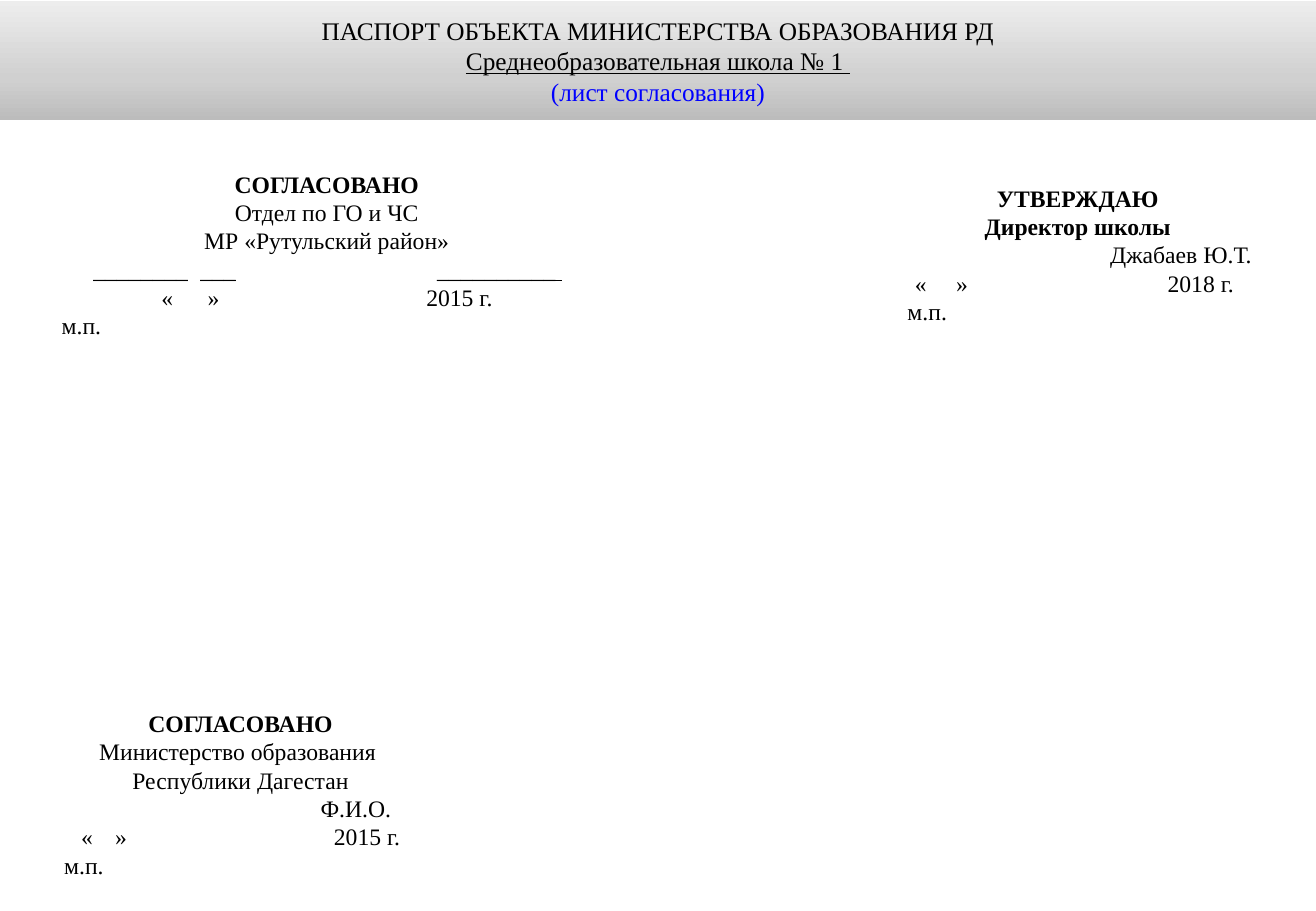
from dataclasses import dataclass

import lxml.etree
import pptx
import pptx.dml.color
import pptx.enum.shapes
import pptx.enum.text
import pptx.oxml.ns
import pptx.util

Inches = pptx.util.Inches
qn = pptx.oxml.ns.qn
CENTER = pptx.enum.text.PP_ALIGN.CENTER
LEFT = pptx.enum.text.PP_ALIGN.LEFT


@dataclass(frozen=True)
class Theme:
    font: str = "Times New Roman"
    title_size: float = 15
    body_size: float = 14
    ink: str = "000000"
    accent: str = "0000FF"
    frame: str = "FFFFFF"
    frame_width: float = 2
    banner_stops: tuple[tuple[int, str], ...] = ((0, "BCBCBC"), (35, "D0D0D0"), (100, "EDEDED"))


THEME = Theme()


@dataclass(frozen=True)
class Piece:
    text: str
    bold: bool = False
    underline: bool = False
    color: str = THEME.ink


@dataclass(frozen=True)
class Line:
    pieces: tuple[Piece, ...]
    tab_stops: tuple[float, ...] = ()


@dataclass(frozen=True)
class Block:
    left: float
    top: float
    width: float
    height: float
    lines: tuple[Line, ...]


def text_line(text: str, *, bold: bool = False, underline: bool = False,
              color: str = THEME.ink, tab_stops: tuple[float, ...] = ()) -> Line:
    return Line((Piece(text, bold, underline, color),), tab_stops)


def date_line(year: str, *tab_stops: float) -> Line:
    return text_line(f"\t«\t»\t{year} г.", tab_stops=tab_stops)


def stamp_line(indent: float) -> Line:
    return text_line("\tм.п.", tab_stops=(indent,))


def signature_line(name: str, *tab_stops: float) -> Line:
    return Line((Piece("\t"), Piece("\t", underline=True), Piece(name)), tab_stops)


BANNER = Block(0, 0.01, 10.83, 0.98, (
    text_line("ПАСПОРТ ОБЪЕКТА МИНИСТЕРСТВА ОБРАЗОВАНИЯ РД"),
    text_line("Среднеобразовательная школа № 1 ", underline=True),
    text_line("(лист согласования)", color=THEME.accent),
))

APPROVALS = (
    Block(0.36, 1.39, 4.66, 1.41, (
        text_line("СОГЛАСОВАНО", bold=True),
        text_line("Отдел по ГО и ЧС"),
        text_line("МР «Рутульский район»"),
        Line((Piece("\t"), Piece("________\t___", underline=True), Piece("\t"),
              Piece("\t__________ ", underline=True)), (0.31, 1.19, 1.72, 3.14)),
        date_line("2015", 0.87, 1.25, 3.05),
        stamp_line(0.05),
    )),
    Block(7.27, 1.39, 3.2, 1.41, (
        text_line("УТВЕРЖДАЮ", bold=True),
        text_line("Директор школы", bold=True),
        signature_line(" Джабаев Ю.Т.", 0.06, 1.72),
        date_line("2018", 0.16, 0.5, 2.24),
        stamp_line(0.1),
    )),
    Block(0.38, 5.83, 3.2, 1.41, (
        text_line("СОГЛАСОВАНО", bold=True),
        text_line("Министерство образования "),
        text_line("Республики Дагестан"),
        signature_line("Ф.И.О.", 0.26, 2.16),
        date_line("2015", 0.19, 0.47, 2.27),
        stamp_line(0.05),
    )),
)


def rgb(color: str) -> pptx.dml.color.RGBColor:
    return pptx.dml.color.RGBColor.from_string(color)


def add_text(paragraph, text: str, *, size: float, bold: bool, underline: bool, color: str) -> None:
    run = paragraph.add_run()
    run.text = text
    run.font.name = THEME.font
    run.font.size = pptx.util.Pt(size)
    run.font.bold = bold
    run.font.underline = underline
    run.font.color.rgb = rgb(color)


def set_tab_stops(paragraph, positions: tuple[float, ...]) -> None:
    properties = paragraph._p.get_or_add_pPr()
    tab_list = lxml.etree.SubElement(properties, qn("a:tabLst"))
    for position in positions:
        lxml.etree.SubElement(tab_list, qn("a:tab"), pos=str(Inches(position)), algn="l")


def add_block(slide, block: Block, size: float):
    shape = slide.shapes.add_shape(
        pptx.enum.shapes.MSO_SHAPE.RECTANGLE, Inches(block.left), Inches(block.top),
        Inches(block.width), Inches(block.height))
    shape.shadow.inherit = False
    frame = shape.text_frame
    frame.word_wrap = True
    frame.vertical_anchor = pptx.enum.text.MSO_ANCHOR.MIDDLE
    for index, line in enumerate(block.lines):
        paragraph = frame.add_paragraph() if index else frame.paragraphs[0]
        paragraph.alignment = LEFT if line.tab_stops else CENTER
        if line.tab_stops:
            set_tab_stops(paragraph, line.tab_stops)
        for piece in line.pieces:
            add_text(paragraph, piece.text, size=size, bold=piece.bold,
                     underline=piece.underline, color=piece.color)
    return shape


def add_banner(slide) -> None:
    shape = add_block(slide, BANNER, THEME.title_size)
    shape.line.fill.background()
    shape.fill.gradient()
    shape.fill.gradient_angle = 90
    stop_list = shape._element.spPr.find(f".//{qn('a:gsLst')}")
    for stop in list(stop_list):
        stop_list.remove(stop)
    for percent, color in THEME.banner_stops:
        stop = lxml.etree.SubElement(stop_list, qn("a:gs"), pos=str(percent * 1000))
        lxml.etree.SubElement(stop, qn("a:srgbClr"), val=color)


def add_approval(slide, block: Block) -> None:
    shape = add_block(slide, block, THEME.body_size)
    shape.fill.background()
    shape.line.color.rgb = rgb(THEME.frame)
    shape.line.width = pptx.util.Pt(THEME.frame_width)


def main() -> None:
    presentation = pptx.Presentation()
    presentation.slide_width = Inches(10.83)
    presentation.slide_height = Inches(7.5)
    slide = presentation.slides.add_slide(presentation.slide_layouts[6])
    add_banner(slide)
    for block in APPROVALS:
        add_approval(slide, block)
    presentation.save("out.pptx")


if __name__ == "__main__":
    main()
